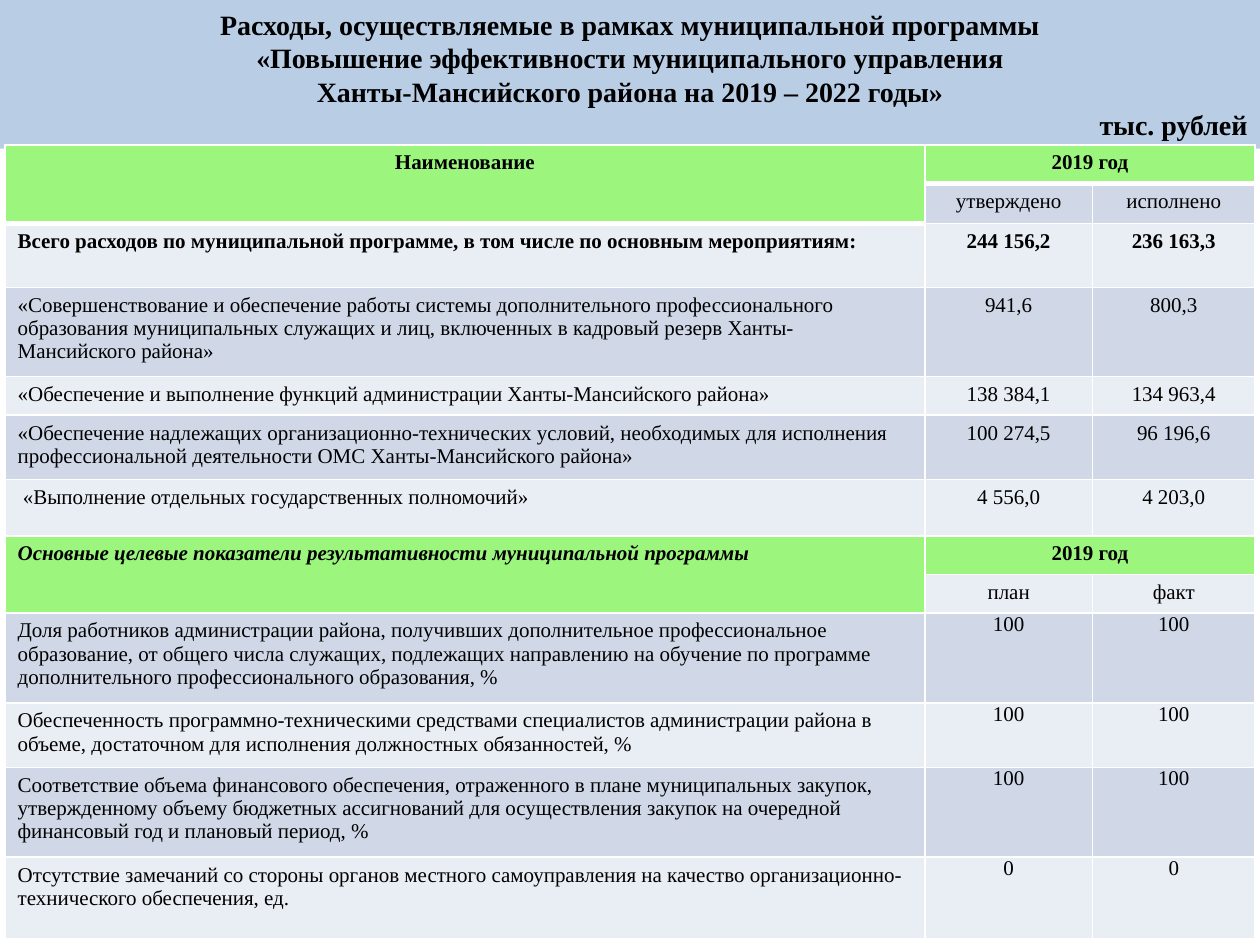
import pptx
import pptx.util
import pptx.dml.color
import pptx.enum.shapes
import pptx.enum.text
import pptx.oxml.ns
from lxml import etree

Pt = pptx.util.Pt
ALIGN = pptx.enum.text.PP_ALIGN
FONT = "Times New Roman"
COLORS = {
    "banner": "B9CDE5",
    "header": "9CF57D",
    "dark": "D0D8E8",
    "light": "E9EDF4",
    "border": "FFFFFF",
    "text": "000000",
}
TITLE_LINES = [
    "Расходы, осуществляемые в рамках муниципальной программы",
    "«Повышение эффективности муниципального управления",
    "Ханты-Мансийского района на 2019 – 2022 годы»",
]
UNIT = "тыс. рублей"
COLUMN_WIDTHS = [525.6, 95.8, 92.9]
ROWS = [
    (22, "Наименование", "2019 год", ""),
    (23, "", "утверждено", "исполнено"),
    (36.4, "Всего расходов по муниципальной программе, в том числе по основным мероприятиям:",
     "244 156,2", "236 163,3"),
    (51, "«Совершенствование и обеспечение работы системы дополнительного профессионального "
     "образования муниципальных служащих и лиц, включенных в кадровый резерв "
     "Ханты-Мансийского района»", "941,6", "800,3"),
    (22, "«Обеспечение и выполнение функций администрации Ханты-Мансийского района»",
     "138 384,1", "134 963,4"),
    (36.8, "«Обеспечение надлежащих организационно-технических условий, необходимых для исполнения "
     "профессиональной деятельности ОМС Ханты-Мансийского района»", "100 274,5", "96 196,6"),
    (32.3, " «Выполнение отдельных государственных полномочий»", "4 556,0", "4 203,0"),
    (22, "Основные целевые показатели результативности муниципальной программы", "2019 год", ""),
    (22, "", "план", "факт"),
    (51.4, "Доля работников администрации района, получивших дополнительное профессиональное "
     "образование, от общего числа служащих, подлежащих направлению на обучение по программе "
     "дополнительного профессионального образования, %", "100", "100"),
    (36.8, "Обеспеченность программно-техническими средствами специалистов администрации района в "
     "объеме, достаточном для исполнения должностных обязанностей, %", "100", "100"),
    (51.4, "Соответствие объема финансового обеспечения, отраженного в плане муниципальных закупок, "
     "утвержденному объему бюджетных ассигнований для осуществления закупок на очередной "
     "финансовый год и плановый период, %", "100", "100"),
    (46.8, "Отсутствие замечаний со стороны органов местного самоуправления на качество "
     "организационно-технического обеспечения, ед.", "0", "0"),
]
HEADER_ROWS = (0, 7)
BOLD_ROWS = (0, 2, 7)
FIRST_INDICATOR = 9


def rgb(name):
    return pptx.dml.color.RGBColor.from_string(COLORS[name])


def style_paragraph(para, size, bold, align, italic=False):
    para.alignment = align
    for span in para.runs:
        span.font.name = FONT
        span.font.size = Pt(size)
        span.font.bold = bold
        span.font.italic = italic
        span.font.color.rgb = rgb("text")


def set_borders(cell, widths):
    properties = cell._tc.get_or_add_tcPr()
    for side, width in widths.items():
        line = etree.SubElement(properties, pptx.oxml.ns.qn("a:ln" + side), w=str(Pt(width)))
        fill = etree.SubElement(line, pptx.oxml.ns.qn("a:solidFill"))
        etree.SubElement(fill, pptx.oxml.ns.qn("a:srgbClr"), val=COLORS["border"])


def add_banner(page, left, top, width, height):
    box = page.shapes.add_shape(pptx.enum.shapes.MSO_SHAPE.RECTANGLE,
                                Pt(left), Pt(top), Pt(width), Pt(height))
    box.shadow.inherit = False
    box.fill.solid()
    box.fill.fore_color.rgb = rgb("banner")
    box.line.fill.background()
    frame = box.text_frame
    frame.word_wrap = True
    frame.margin_right = frame.margin_left = Pt(7.2)
    frame.vertical_anchor = pptx.enum.text.MSO_ANCHOR.MIDDLE
    frame.text = "\n".join(TITLE_LINES + [UNIT])
    for para in frame.paragraphs:
        style_paragraph(para, 16, True, ALIGN.CENTER)
    frame.paragraphs[-1].alignment = ALIGN.RIGHT


def fill_cell(cell, row, column, text):
    is_header = row in HEADER_ROWS or (row - 1 in HEADER_ROWS and column == 0)
    thick_top = (row == 1 and column > 0) or (row == 2 and column == 0)
    thick_bottom = (row == 0 and column > 0) or (row < 2 and column == 0)
    set_borders(cell, {"L": 1, "R": 1, "T": 3 if thick_top else 1,
                       "B": 3 if thick_bottom else 1})
    cell.fill.solid()
    band = "dark" if row % 2 else "light"
    cell.fill.fore_color.rgb = rgb("header" if is_header else band)
    if row >= FIRST_INDICATOR and column > 0:
        cell.margin_left = cell.margin_right = Pt(5)
        cell.margin_top = cell.margin_bottom = Pt(0)
    cell.text_frame.text = text
    centred = column > 0 or row == 0
    style_paragraph(cell.text_frame.paragraphs[0], 12, row in BOLD_ROWS,
                    ALIGN.CENTER if centred else ALIGN.LEFT,
                    italic=row == 7 and column == 0)


def add_expense_table(page, left, top, width, height):
    table = page.shapes.add_table(len(ROWS), len(COLUMN_WIDTHS),
                                  Pt(left), Pt(top), Pt(width), Pt(height)).table
    for column, column_width in zip(table.columns, COLUMN_WIDTHS):
        column.width = Pt(column_width)
    for row, (row_height, *texts) in enumerate(ROWS):
        table.rows[row].height = Pt(row_height)
        for column, text in enumerate(texts):
            fill_cell(table.cell(row, column), row, column, text)
    for row in HEADER_ROWS:
        table.cell(row, 0).merge(table.cell(row + 1, 0))
        table.cell(row, 1).merge(table.cell(row, 2))


def main():
    deck = pptx.Presentation()
    deck.slide_width, deck.slide_height = Pt(720), Pt(540)
    page = deck.slides.add_slide(deck.slide_layouts[6])
    add_banner(page, 0, 0, 720, 85)
    add_expense_table(page, 2.9, 82.8, sum(COLUMN_WIDTHS), sum(row[0] for row in ROWS))
    deck.save("out.pptx")


if __name__ == "__main__":
    main()
